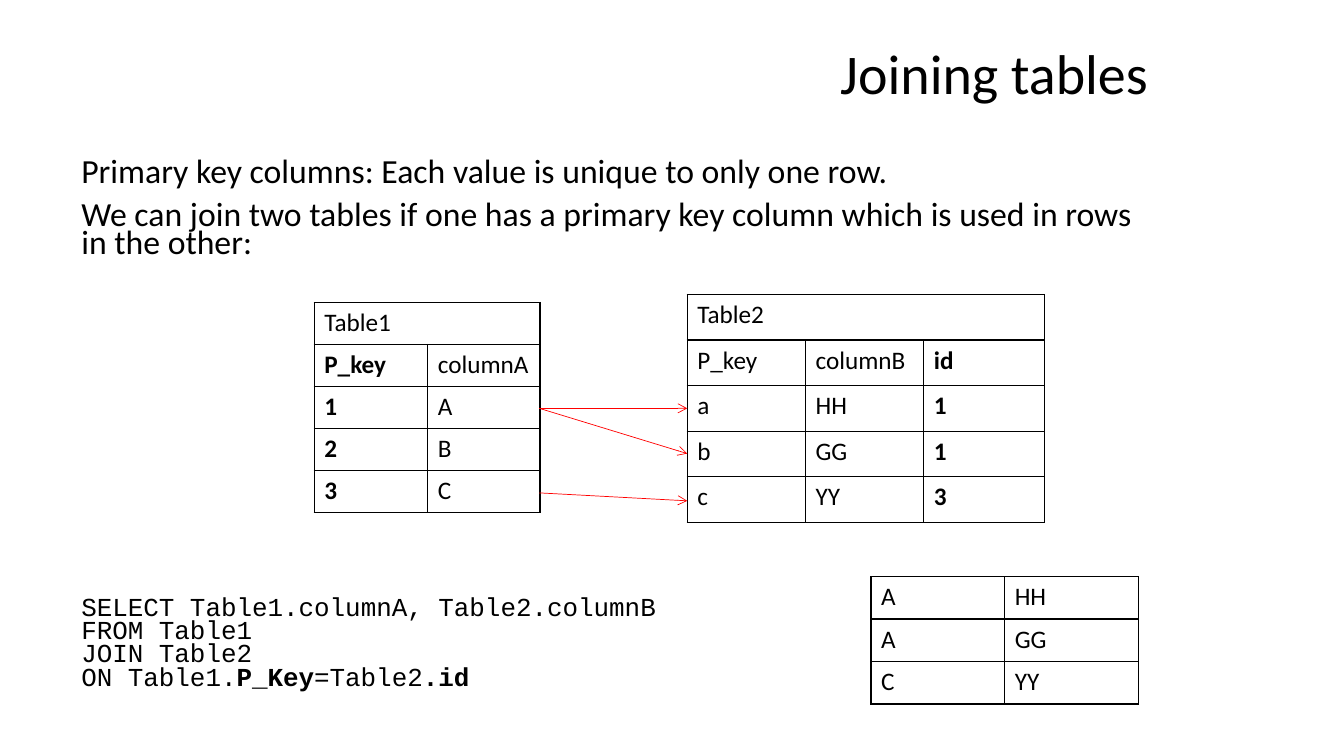
"""Build a slide that explains how two tables are joined in SQL."""
import pptx
import pptx.util
import pptx.dml.color
import pptx.enum.text
import pptx.enum.shapes
import pptx.oxml
import lxml.etree

Cm, Pt = pptx.util.Cm, pptx.util.Pt
BLACK = pptx.dml.color.RGBColor(0, 0, 0)
RED = pptx.dml.color.RGBColor(255, 0, 0)
NS = 'xmlns:a="http://schemas.openxmlformats.org/drawingml/2006/main"'


def style(para, size, face="Calibri", bold=None):
    para.font.size = Pt(size)
    para.font.name = face
    para.font.bold = bold
    para.font.color.rgb = BLACK


def edge(cell):
    props = cell._tc.get_or_add_tcPr()
    for i, side in enumerate(("lnL", "lnR", "lnT", "lnB")):
        props.insert(i, pptx.oxml.parse_xml(
            f'<a:{side} {NS} w="12700"><a:solidFill><a:srgbClr val="{BLACK}"/>'
            f'</a:solidFill></a:{side}>'))


deck = pptx.Presentation()
deck.slide_width, deck.slide_height = Cm(33.87), Cm(19.05)
slide = deck.slides.add_slide(deck.slide_layouts[5])
shapes = slide.shapes

title = shapes.title
title.left, title.top, title.width, title.height = Cm(6.32), Cm(0.33), Cm(22.86), Cm(3.18)
title.text_frame.text = "Joining tables"
title.text_frame.vertical_anchor = pptx.enum.text.MSO_ANCHOR.MIDDLE
head = title.text_frame.paragraphs[0]
head.alignment = pptx.enum.text.PP_ALIGN.RIGHT
head.line_spacing = 0.9
style(head, 40)

intro = shapes.add_textbox(Cm(1.8), Cm(3.94), Cm(27.53), Cm(2.8)).text_frame
intro.word_wrap = True
intro.text = (
    "Primary key columns: Each value is unique to only one row.\n"
    "We can join two tables if one has a primary key column which is used in rows in the other:")
for para in intro.paragraphs:
    para.line_spacing = 0.7
    para.space_before = Pt(10)
    style(para, 24.1)

query = shapes.add_textbox(Cm(1.8), Cm(14.93), Cm(18), Cm(2.6)).text_frame
query.word_wrap = True
query.text = "SELECT Table1.columnA, Table2.columnB\nFROM Table1\nJOIN Table2\nON Table1."
for para in query.paragraphs:
    para.line_spacing = 0.75
    style(para, 18.5, "Courier New")
for text, bold in (("P_Key", True), ("=Table2", False), (".id", True)):
    run = para.add_run()
    run.text = text
    run.font.bold = bold

# left, top, row height, column widths, key column in bold, rows
grids = (
    (7.92, 7.62, 1.06, (2.86, 2.83), 0,
     (("Table1",), ("P_key", "columnA"), ("1", "A"), ("2", "B"), ("3", "C"))),
    (17.32, 7.42, 1.15, (2.98, 2.98, 3.04), 2,
     (("Table2",), ("P_key", "columnB", "id"),
      ("a", "HH", "1"), ("b", "GG", "1"), ("c", "YY", "3"))),
    (21.95, 14.53, 1.07, (3.37, 3.37), None,
     (("A", "HH"), ("A", "GG"), ("C", "YY"))),
)
for left, top, high, widths, key, rows in grids:
    table = shapes.add_table(len(rows), len(widths), Cm(left), Cm(top),
                             Cm(sum(widths)), Cm(high * len(rows))).table
    table.first_row = table.horz_banding = False
    for col, wide in zip(table.columns, widths):
        col.width = Cm(wide)
    for r, row in enumerate(rows):
        table.rows[r].height = Cm(high)
        for c in range(len(widths)):
            cell = table.cell(r, c)
            cell.fill.background()
            edge(cell)
            if c < len(row):
                cell.text = row[c]
            style(cell.text_frame.paragraphs[0], 18, bold=len(row) > 1 and c == key)
        if len(row) == 1:
            table.cell(r, 0).merge(table.cell(r, len(widths) - 1))

for start, end in ((10.29, 10.29), (10.29, 11.43), (12.42, 12.62)):
    arrow = shapes.add_connector(pptx.enum.shapes.MSO_CONNECTOR.STRAIGHT,
                                 Cm(13.59), Cm(start), Cm(17.32), Cm(end))
    arrow.line.color.rgb = RED
    arrow.line.width = Pt(0.5)
    arrow.line._get_or_add_ln().append(
        pptx.oxml.parse_xml(f'<a:tailEnd {NS} type="arrow"/>'))
    arrow._element.spPr.append(pptx.oxml.parse_xml(f'<a:effectLst {NS}/>'))

deck.save("out.pptx")
